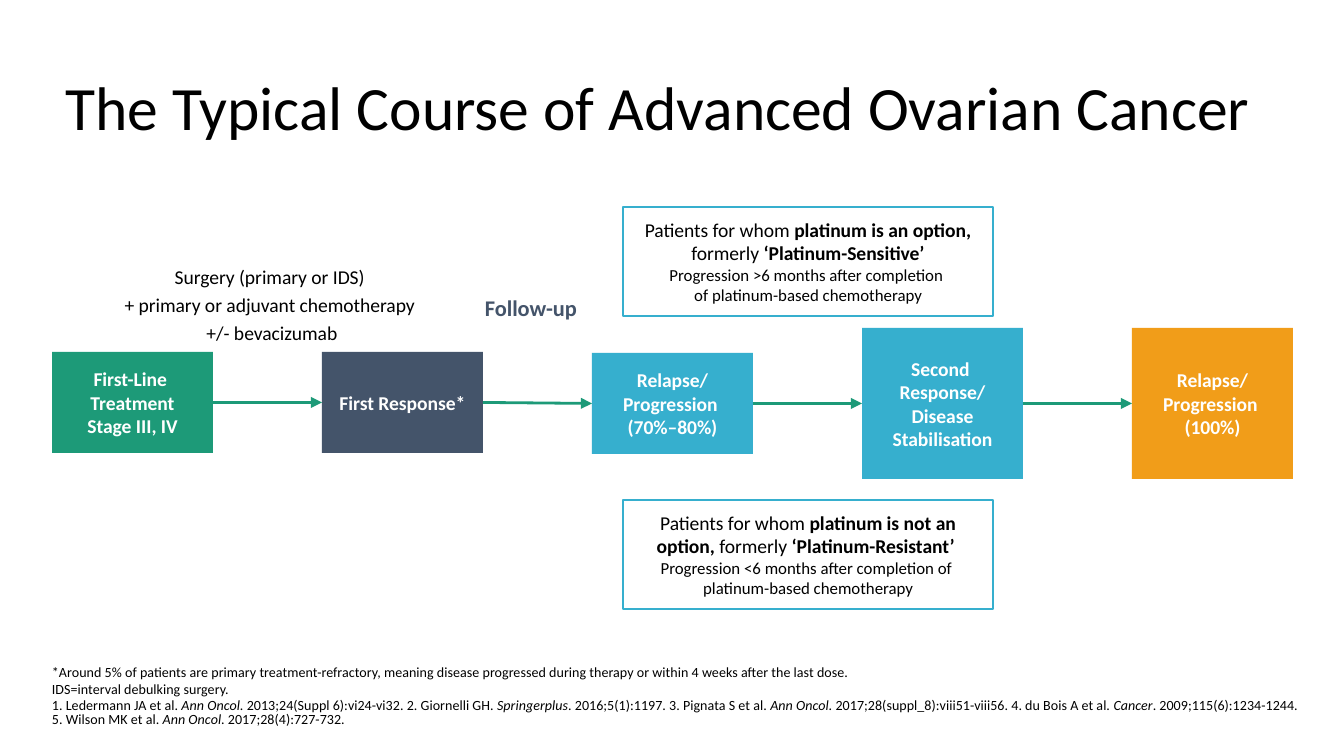
from dataclasses import dataclass

import pptx
import pptx.dml.color
import pptx.enum.shapes
import pptx.enum.text
import pptx.oxml
import pptx.oxml.ns
import pptx.util

EMU_PER_PX = 914400 / 134.4
FONT = "Calibri"
BLACK, WHITE = "000000", "FFFFFF"
GREEN, SLATE, BLUE, ORANGE = "1D9A78", "44546A", "36AFCE", "F19D19"
ALIGN = pptx.enum.text.PP_ALIGN
ANCHOR = pptx.enum.text.MSO_ANCHOR


@dataclass
class Run:
    text: str
    bold: bool = False
    italic: bool = False


@dataclass
class Para:
    runs: list[Run]
    size: float = 10.5
    color: str = BLACK
    align: ALIGN = ALIGN.CENTER
    line_spacing: float = 1.0
    space_before: float = 0


@dataclass
class Step:
    paras: list[str]
    fill: str
    top: int
    height: int
    wrap: bool = True


@dataclass
class Callout:
    top: int
    headline: list[Run]
    detail: str


def px(n: int) -> pptx.util.Emu:
    return pptx.util.Emu(round(n * EMU_PER_PX))


def rgb(color: str) -> pptx.dml.color.RGBColor:
    return pptx.dml.color.RGBColor.from_string(color)


def write(sp, paras: list[Para], anchor=ANCHOR.MIDDLE, wrap: bool = True,
          inset: tuple[int, int] | None = None, grow: bool = False) -> None:
    """Fill a shape's text frame; a newline in a run is a line break."""
    tf = sp.text_frame
    tf.word_wrap = wrap
    tf.auto_size = (pptx.enum.text.MSO_AUTO_SIZE.SHAPE_TO_FIT_TEXT if grow
                    else pptx.enum.text.MSO_AUTO_SIZE.NONE)
    tf.vertical_anchor = anchor
    if inset is not None:
        tf.margin_left = tf.margin_right = px(inset[0])
        tf.margin_top = tf.margin_bottom = px(inset[1])
    for i, para in enumerate(paras):
        p = tf.add_paragraph() if i else tf.paragraphs[0]
        p.alignment = para.align
        p.line_spacing = para.line_spacing
        p.space_before = pptx.util.Pt(para.space_before if i else 0)
        for run in para.runs:
            for j, line in enumerate(run.text.split("\n")):
                if j:
                    p.add_line_break()
                r = p.add_run()
                r.text = line
                r.font.name = FONT
                r.font.size = pptx.util.Pt(para.size)
                r.font.bold = run.bold
                r.font.italic = run.italic
                r.font.color.rgb = rgb(para.color)


def add_box(s, x: int, y: int, w: int, h: int, fill: str, line: str | None = None):
    sp = s.shapes.add_shape(pptx.enum.shapes.MSO_SHAPE.RECTANGLE,
                            px(x), px(y), px(w), px(h))
    sp.shadow.inherit = False
    sp.fill.solid()
    sp.fill.fore_color.rgb = rgb(fill)
    if line:
        sp.line.color.rgb = rgb(line)
        sp.line.width = pptx.util.Pt(1)
    else:
        sp.line.fill.background()
    return sp


def add_text(s, x: int, y: int, w: int, h: int, paras: list[Para], **frame):
    sp = s.shapes.add_textbox(px(x), px(y), px(w), px(h))
    write(sp, paras, grow=True, **frame)
    return sp


def add_arrow(s, start, end) -> None:
    """Join the right side of one box to the left side of the next."""
    c = s.shapes.add_connector(pptx.enum.shapes.MSO_CONNECTOR.STRAIGHT, 0, 0, 0, 0)
    c.begin_connect(start, 3)
    c.end_connect(end, 1)
    c.line.color.rgb = rgb(GREEN)
    c.line.width = pptx.util.Pt(1.5)
    ln = c.line._get_or_add_ln()
    tail = pptx.oxml.parse_xml(
        f'<a:tailEnd {pptx.oxml.ns.nsdecls("a")} type="triangle"/>')
    ln.append(tail)
    ln.addnext(pptx.oxml.parse_xml(f'<a:effectLst {pptx.oxml.ns.nsdecls("a")}/>'))


STEP_LEFT, STEP_PITCH, STEP_WIDTH = 52, 270, 161
STEPS = [
    Step(["First-Line \nTreatment", "Stage III, IV"], GREEN, 352, 101),
    Step(["First Response*"], SLATE, 352, 101, wrap=False),
    Step(["Relapse/\nProgression \n(70%–80%)"], BLUE, 353, 101, wrap=False),
    Step(["Second \nResponse/\nDisease Stabilisation"], BLUE, 328, 151),
    Step(["Relapse/\nProgression \n(100%)"], ORANGE, 328, 151),
]

CALLOUTS = [
    Callout(207, [Run("Patients for whom "), Run("platinum is an option, ", bold=True),
                  Run("formerly"), Run(" ‘Platinum-Sensitive’", bold=True)],
            "Progression >6 months after completion \nof platinum-based chemotherapy"),
    Callout(500, [Run("Patients for whom "), Run("platinum is not an option, ", bold=True),
                  Run("formerly "), Run("‘Platinum-Resistant’ ", bold=True)],
            "Progression <6 months after completion of \nplatinum-based chemotherapy"),
]

FOOTNOTES = [
    [Run("*Around 5% of patients are primary treatment-refractory, meaning disease "
         "progressed during therapy or within 4 weeks after the last dose.")],
    [Run("IDS=interval debulking surgery.")],
    [Run("1. Ledermann JA et al. "), Run("Ann Oncol. ", italic=True),
     Run("2013;24(Suppl 6):vi24-vi32. 2. Giornelli GH. "),
     Run("Springerplus", italic=True),
     Run(". 2016;5(1):1197. 3. Pignata S et al. "), Run("Ann Oncol. ", italic=True),
     Run("2017;28(suppl_8):viii51-viii56. 4. du Bois A et al. "),
     Run("Cancer", italic=True),
     Run(". 2009;115(6):1234-1244. \n5. Wilson MK et al. "),
     Run("Ann Oncol", italic=True), Run(". 2017;28(4):727-732.")],
]


def main() -> None:
    prs = pptx.Presentation()
    prs.slide_width, prs.slide_height = px(1344), px(756)
    s = prs.slides.add_slide(prs.slide_layouts[5])

    # Title
    title = s.shapes.title
    title.left, title.top, title.width, title.height = px(52), px(58), px(1224), px(105)
    write(title, [Para([Run("The Typical Course of Advanced Ovarian Cancer")],
                       size=33, align=ALIGN.LEFT, line_spacing=0.9)])

    # Treatment steps and the arrows between them
    boxes = []
    for i, step in enumerate(STEPS):
        sp = add_box(s, STEP_LEFT + i * STEP_PITCH, step.top, STEP_WIDTH,
                     step.height, step.fill)
        write(sp, [Para([Run(text, bold=True)], color=WHITE) for text in step.paras],
              wrap=step.wrap)
        boxes.append(sp)
    for start, end in zip(boxes, boxes[1:]):
        add_arrow(s, start, end)

    # Labels above the arrows
    add_text(s, 82, 253, 380, 99, [Para(
        [Run("Surgery (primary or IDS) \n+ primary or adjuvant chemotherapy \n"
             "+/- bevacizumab")], line_spacing=1.2)])
    add_text(s, 464, 282, 134, 46, [Para(
        [Run("Follow-up", bold=True)], size=12, color=SLATE, line_spacing=1.2)],
        anchor=ANCHOR.TOP, wrap=False)

    # Platinum callouts
    for callout in CALLOUTS:
        sp = add_box(s, 623, callout.top, 370, 109, WHITE, BLUE)
        write(sp, [Para(callout.headline), Para([Run(callout.detail)], size=9)],
              inset=(13, 9), grow=True)

    # Footnotes and references
    add_text(s, 52, 665, 1253, 62,
             [Para(runs, size=7.5, align=ALIGN.LEFT, line_spacing=0.8, space_before=1.8)
              for runs in FOOTNOTES],
             anchor=ANCHOR.BOTTOM, inset=(0, 0))

    prs.save("out.pptx")


if __name__ == "__main__":
    main()
